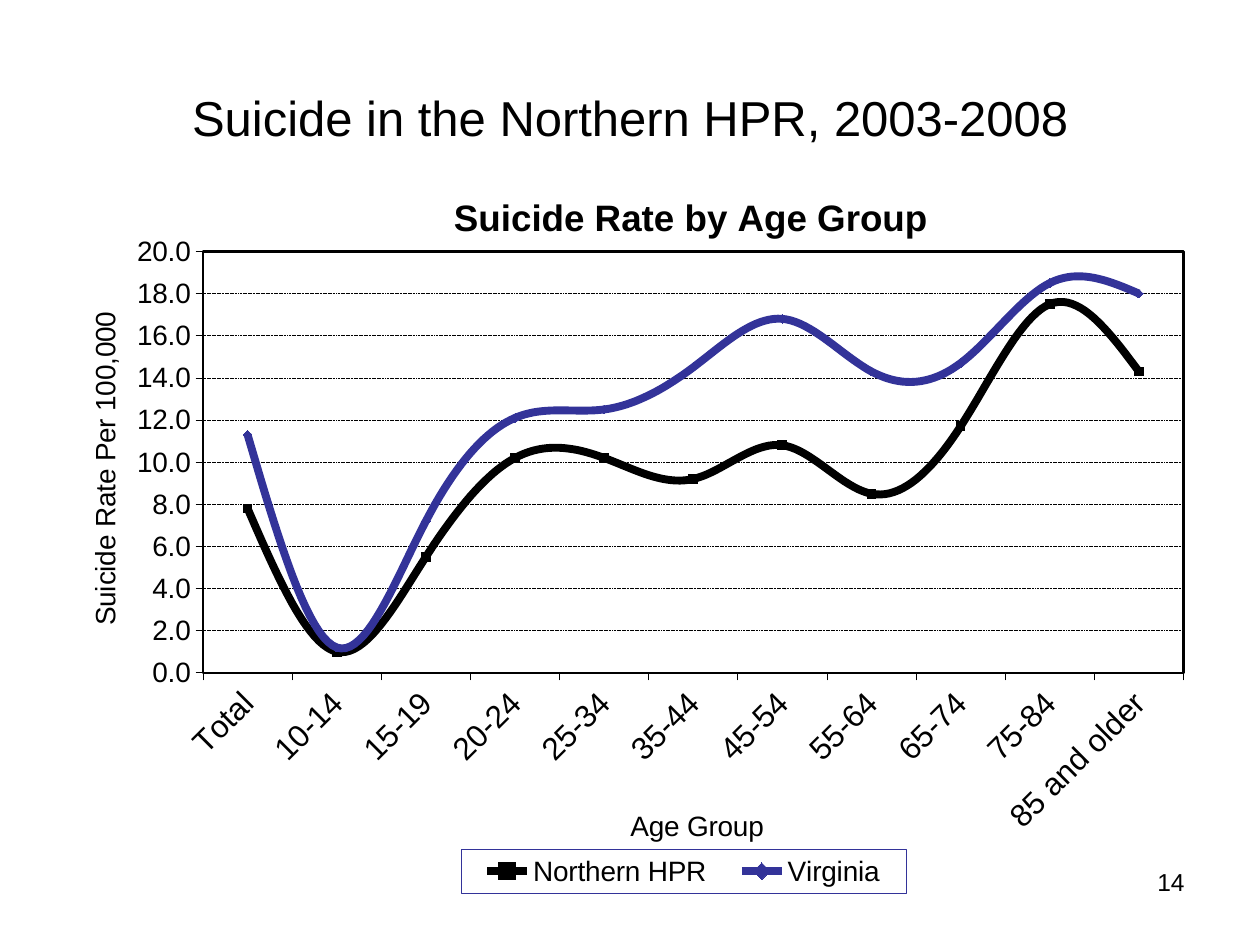
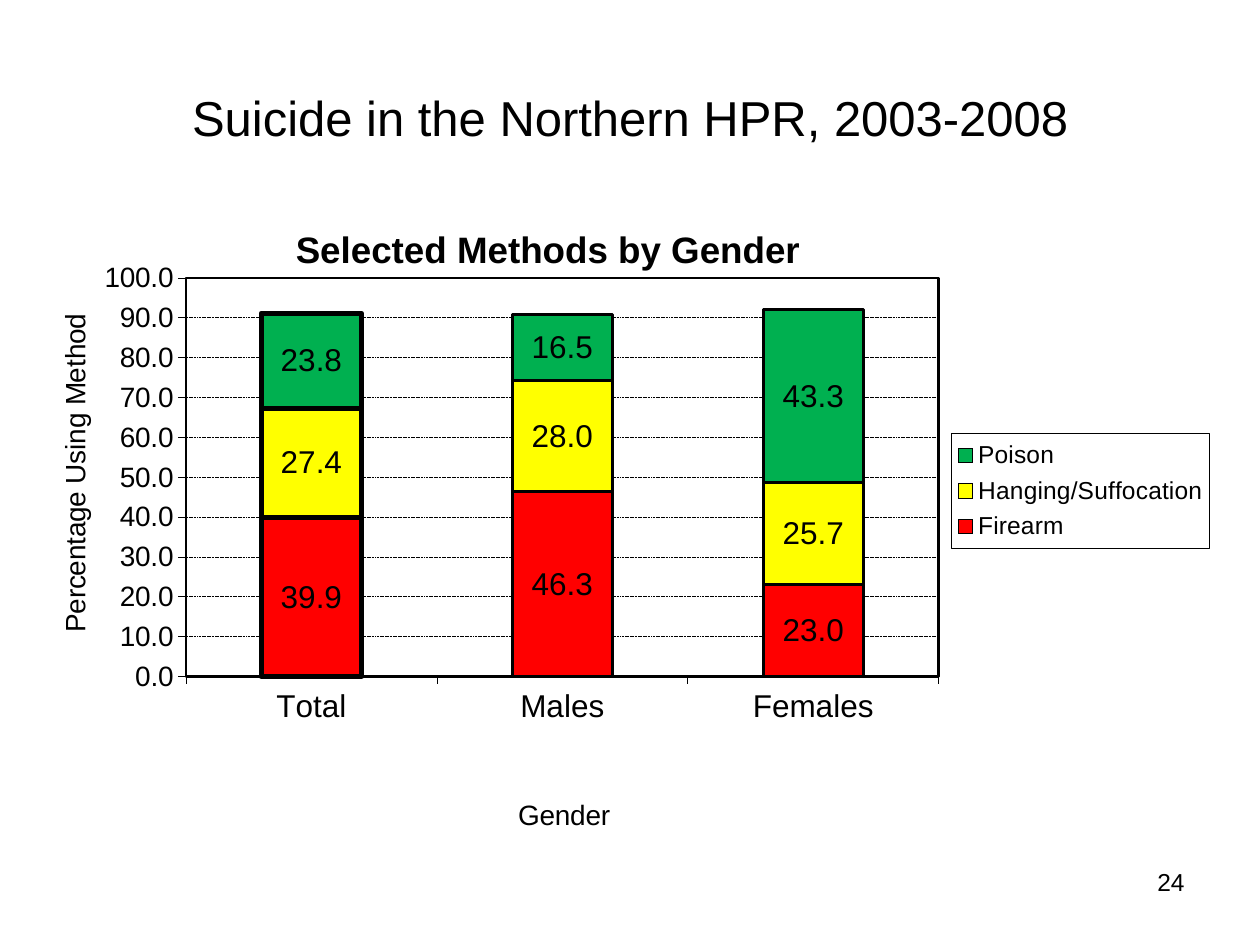
from dataclasses import dataclass

from lxml.etree import SubElement
from pptx import Presentation
from pptx.chart.data import CategoryChartData
from pptx.dml.color import RGBColor
from pptx.enum.chart import XL_CHART_TYPE, XL_LEGEND_POSITION, XL_MARKER_STYLE, XL_TICK_MARK
from pptx.enum.dml import MSO_LINE
from pptx.enum.text import MSO_ANCHOR, PP_ALIGN
from pptx.oxml import parse_xml
from pptx.oxml.ns import nsdecls, qn
from pptx.util import Inches, Pt


@dataclass(frozen=True)
class Theme:
    font: str = "Arial"
    ink: str = "000000"
    indigo: str = "333399"
    red: str = "FF0000"
    yellow: str = "FFFF00"
    green: str = "00B050"
    title: float = 28
    chart_title: float = 21
    category: float = 18
    axis: float = 16
    small: float = 14
    hairline: float = 0.38
    frame: float = 1.5
    curve: float = 4.5
    bar_edge: float = 1.75
    total_edge: float = 3


HEADING = "Suicide in the Northern HPR, 2003-2008"


def place(element, after, *percents):
    for old in element.findall(qn("c:layout")):
        element.remove(old)
    layout = parse_xml(f"<c:layout {nsdecls('c')}/>")
    manual = SubElement(layout, qn("c:manualLayout"))
    settings = {"xMode": "edge", "yMode": "edge"}
    for side, percent in zip("xywh", percents):
        settings[side] = round(percent / 100, 4)
    if after is None:
        settings = {"layoutTarget": "inner", **settings}
        element.insert(0, layout)
    else:
        element.find(qn(after)).addnext(layout)
    for tag, value in settings.items():
        SubElement(manual, qn(f"c:{tag}")).set("val", str(value))


def border(color, width):
    return parse_xml(
        f"<c:spPr {nsdecls('c', 'a')}><a:noFill/><a:ln w=\"{Pt(width)}\"><a:solidFill>"
        f"<a:srgbClr val=\"{color}\"/></a:solidFill></a:ln></c:spPr>"
    )


class Deck:
    def __init__(self, theme):
        self.theme = theme
        self.presentation = Presentation()
        self.presentation.slide_width = Inches(10)
        self.presentation.slide_height = Inches(7.5)
        self.slide = None

    def style(self, font, size, bold=False):
        font.name = self.theme.font
        font.size = Pt(size)
        font.bold = bold
        font.color.rgb = RGBColor.from_string(self.theme.ink)

    def stroke(self, line, color, width):
        line.color.rgb = RGBColor.from_string(color)
        line.width = Pt(width)

    def fill(self, target, color, edge_width, edge):
        target.fill.solid()
        target.fill.fore_color.rgb = RGBColor.from_string(color)
        self.stroke(target.line, edge, edge_width)

    def set_text(self, frame, text, size, align=None, bold=False):
        frame.text = text
        paragraph = frame.paragraphs[0]
        paragraph.alignment = align
        self.style(paragraph.font, size, bold)

    def add_slide(self, heading, number):
        self.slide = self.presentation.slides.add_slide(self.presentation.slide_layouts[5])
        title = self.slide.shapes.title
        title.left, title.top = Inches(0.5), Inches(0.3)
        title.width, title.height = Inches(9), Inches(1.25)
        title.text_frame.vertical_anchor = MSO_ANCHOR.MIDDLE
        self.set_text(title.text_frame, heading, self.theme.title, PP_ALIGN.CENTER)
        page = self.slide.shapes.add_textbox(Inches(7.17), Inches(6.83), Inches(2.33), Inches(0.52))
        page.text_frame.word_wrap = True
        self.set_text(page.text_frame, str(number), self.theme.small, PP_ALIGN.RIGHT)

    def add_chart(self, kind, box, categories, series, plot_box):
        data = CategoryChartData(number_format="0.0")
        data.categories = categories
        for name, values in series.items():
            data.add_series(name, values)
        chart = self.slide.shapes.add_chart(kind, *map(Inches, box), data).chart
        self.style(chart.font, self.theme.axis)
        plot_area = chart.plots[0]._element.getparent()
        place(plot_area, None, *plot_box)
        plot_area.append(border(self.theme.ink, self.theme.frame))
        chart.plots[0].vary_by_categories = False
        return chart

    def add_chart_title(self, chart, text, spot):
        chart.has_title = True
        self.set_text(chart.chart_title.text_frame, text, self.theme.chart_title, bold=True)
        place(chart.chart_title._element, "c:tx", *spot)

    def format_axis(self, axis, text, spot, size, title_turn=0, label_turn=0):
        axis.has_title = True
        frame = axis.axis_title.text_frame
        self.set_text(frame, text, self.theme.axis)
        frame._txBody.bodyPr.set("rot", str(title_turn * 60000))
        place(axis.axis_title._element, "c:tx", *spot)
        axis.major_tick_mark = XL_TICK_MARK.OUTSIDE
        axis.minor_tick_mark = XL_TICK_MARK.NONE
        self.style(axis.tick_labels.font, size)
        axis._element.txPr.bodyPr.set("rot", str(label_turn * 60000))
        self.stroke(axis.format.line, self.theme.ink, self.theme.hairline)

    def format_scale(self, axis, maximum, step):
        axis.minimum_scale, axis.maximum_scale, axis.major_unit = 0, maximum, step
        axis.tick_labels.number_format = "0.0"
        axis.tick_labels.number_format_is_linked = False
        grid = axis.major_gridlines.format.line
        self.stroke(grid, self.theme.ink, self.theme.hairline)
        grid.dash_style = MSO_LINE.SQUARE_DOT

    def add_legend(self, chart, position, box, size, edge):
        chart.has_legend = True
        legend = chart.legend
        legend.position = position
        legend.include_in_layout = False
        self.style(legend.font, size)
        place(legend._element, "c:legendPos", *box)
        legend._element.find(qn("c:overlay")).addnext(border(edge, self.theme.hairline))

    def format_curve(self, series, color, marker):
        series.smooth = True
        self.stroke(series.format.line, color, self.theme.curve)
        series.marker.style = marker
        series.marker.size = 5
        self.fill(series.marker.format, color, self.theme.hairline, color)

    def format_bars(self, series, color):
        self.fill(series.format, color, self.theme.bar_edge, self.theme.ink)
        self.fill(series.points[0].format, color, self.theme.total_edge, self.theme.ink)
        labels = series.data_labels
        labels.show_value = True
        labels.number_format = "0.0"
        labels.number_format_is_linked = False
        self.style(labels.font, self.theme.category)


def add_age_slide(deck):
    theme = deck.theme
    deck.add_slide(HEADING, 14)
    ages = ["Total", "10-14", "15-19", "20-24", "25-34", "35-44", "45-54",
            "55-64", "65-74", "75-84", "85 and older"]
    rates = {
        "Northern HPR": [7.8, 1, 5.5, 10.2, 10.2, 9.2, 10.8, 8.5, 11.7, 17.5, 14.3],
        "Virginia": [11.3, 1.2, 7.2, 12.1, 12.5, 14.5, 16.8, 14.3, 14.7, 18.5, 18],
    }
    chart = deck.add_chart(XL_CHART_TYPE.LINE_MARKERS, (0.47, 1.25, 9.06, 5.92),
                           ages, rates, (12.6, 12.6, 85.9, 56.5))
    deck.add_chart_title(chart, "Suicide Rate by Age Group", (34, 4))
    deck.format_axis(chart.category_axis, "Age Group", (49.6, 86.6), theme.category, label_turn=-45)
    deck.format_axis(chart.value_axis, "Suicide Rate Per 100,000", (2, 20), theme.axis, title_turn=-90)
    deck.format_scale(chart.value_axis, 20, 2)
    deck.add_legend(chart, XL_LEGEND_POSITION.BOTTOM, (35.2, 92.8, 39, 5.8),
                    theme.axis, theme.indigo)
    looks = [(theme.ink, XL_MARKER_STYLE.SQUARE), (theme.indigo, XL_MARKER_STYLE.DIAMOND)]
    for series, (color, marker) in zip(chart.plots[0].series, looks):
        deck.format_curve(series, color, marker)


def add_method_slide(deck):
    theme = deck.theme
    deck.add_slide(HEADING, 24)
    methods = {
        "Firearm": [39.9, 46.3, 23],
        "Hanging/Suffocation": [27.4, 28, 25.7],
        "Poison": [23.8, 16.5, 43.3],
    }
    chart = deck.add_chart(XL_CHART_TYPE.COLUMN_STACKED, (0.29, 1.5, 9.41, 5.6),
                           ["Total", "Males", "Females"], methods, (12.6, 12.6, 63.5, 56.5))
    deck.add_chart_title(chart, "Selected Methods by Gender", (21.3, 4.4))
    deck.format_axis(chart.category_axis, "Gender", (40.2, 85.5), theme.category)
    deck.format_axis(chart.value_axis, "Percentage Using Method", (1.3, 17), theme.axis, title_turn=-90)
    deck.format_scale(chart.value_axis, 100, 10)
    deck.add_legend(chart, XL_LEGEND_POSITION.RIGHT, (77.2, 34.7, 21.7, 16.2),
                    theme.small, theme.ink)
    bars = chart.plots[0]
    bars.gap_width, bars.overlap = 150, 100
    for series, color in zip(bars.series, (theme.red, theme.yellow, theme.green)):
        deck.format_bars(series, color)


def main():
    deck = Deck(Theme())
    add_age_slide(deck)
    add_method_slide(deck)
    deck.presentation.save("out.pptx")


if __name__ == "__main__":
    main()
